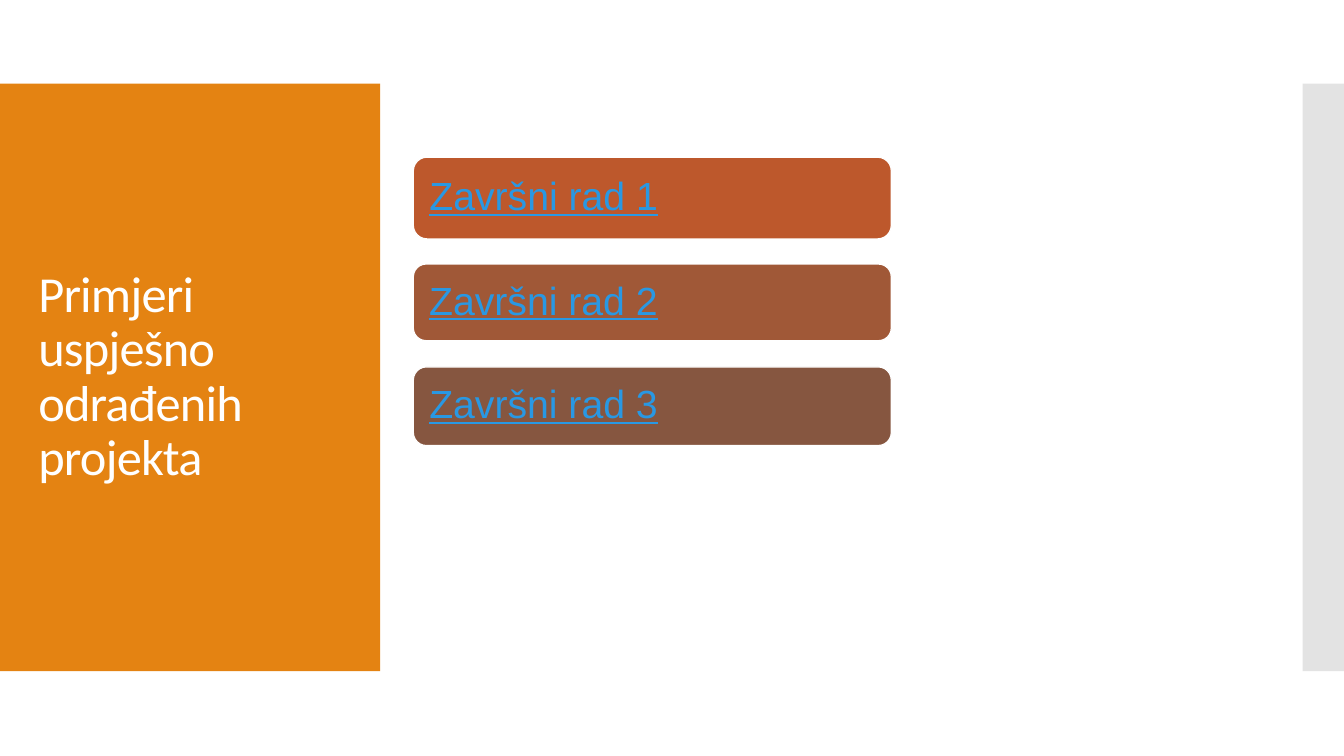
import dataclasses

import pptx
import pptx.dml.color
import pptx.enum.shapes
import pptx.enum.text
import pptx.oxml.ns
import pptx.shapes.autoshape
import pptx.slide
import pptx.text.text
import pptx.util
from lxml import etree

Inches = pptx.util.Inches
Shapes = pptx.enum.shapes.MSO_SHAPE

COLORS = {
    "white": "FFFFFF",
    "orange": "E48312",
    "grey": "C8C8C8",
    "rust": "BD582C",
    "sienna": "A05837",
    "brown": "865640",
    "link": "2998E3",
}


@dataclasses.dataclass(frozen=True)
class Panel:
    left: float
    width: float
    color: str
    opacity: int = 100


@dataclasses.dataclass(frozen=True)
class Project:
    label: str
    top: float
    height: float
    color: str


PANELS = [
    Panel(0, 3.77, "orange"),
    Panel(12.92, 0.42, "grey", opacity=50),
]
PROJECTS = [
    Project("Završni rad 1", 1.56, 0.81, "rust"),
    Project("Završni rad 2", 2.62, 0.76, "sienna"),
    Project("Završni rad 3", 3.64, 0.78, "brown"),
]


def rgb(name: str) -> pptx.dml.color.RGBColor:
    return pptx.dml.color.RGBColor.from_string(COLORS[name])


def write_text(frame: pptx.text.text.TextFrame, text: str, *, size: float, font: str,
               color: str, underline: bool = False, inset: tuple[float, float] = (0.1, 0.05),
               tracking: float = 0) -> None:
    """Write one left-aligned, vertically centred paragraph."""
    frame.word_wrap = True
    frame.auto_size = pptx.enum.text.MSO_AUTO_SIZE.NONE
    frame.vertical_anchor = pptx.enum.text.MSO_ANCHOR.MIDDLE
    frame.margin_left = frame.margin_right = Inches(inset[0])
    frame.margin_top = frame.margin_bottom = Inches(inset[1])
    para = frame.paragraphs[0]
    para.alignment = pptx.enum.text.PP_ALIGN.LEFT
    para.line_spacing = 0.9
    para.space_before = pptx.util.Pt(0)
    span = para.add_run()
    span.text = text
    span.font.size = pptx.util.Pt(size)
    span.font.name = font
    span.font.underline = underline
    span.font.color.rgb = rgb(color)
    if tracking:
        span.font._element.set("spc", str(round(tracking * 100)))


def add_box(page: pptx.slide.Slide, kind: Shapes, left: float, top: float, width: float,
            height: float, color: str) -> pptx.shapes.autoshape.Shape:
    box = page.shapes.add_shape(kind, Inches(left), Inches(top), Inches(width), Inches(height))
    box.shadow.inherit = False
    box.fill.solid()
    box.fill.fore_color.rgb = rgb(color)
    box.line.fill.background()
    return box


def add_panel(page: pptx.slide.Slide, panel: Panel) -> None:
    box = add_box(page, Shapes.RECTANGLE, panel.left, 0.83, panel.width, 5.83, panel.color)
    if panel.opacity < 100:
        fill_color = box.element.spPr.find(".//" + pptx.oxml.ns.qn("a:srgbClr"))
        alpha = etree.SubElement(fill_color, pptx.oxml.ns.qn("a:alpha"))
        alpha.set("val", str(panel.opacity * 1000))


def add_project(page: pptx.slide.Slide, project: Project) -> None:
    box = add_box(page, Shapes.ROUNDED_RECTANGLE, 4.1, project.top, 4.74, project.height,
                  project.color)
    box.line.color.rgb = rgb("white")
    box.line.width = pptx.util.Pt(0.85)
    write_text(box.text_frame, project.label, size=28, font="Arial", color="link",
               underline=True, inset=(0.12, 0.12))


def add_title(page: pptx.slide.Slide, text: str) -> None:
    title = page.shapes.title
    title.left, title.top = Inches(0.28), Inches(1.23)
    title.width, title.height = Inches(3.22), Inches(5.03)
    write_text(title.text_frame, text, size=36, font="Calibri", color="white", tracking=-0.6)
    # Bring the title in front of the panels
    title.element.getparent().append(title.element)


def main() -> None:
    deck = pptx.Presentation()
    deck.slide_width, deck.slide_height = Inches(13.33), Inches(7.5)
    page = deck.slides.add_slide(deck.slide_layouts.get_by_name("Title Only"))
    page.background.fill.solid()
    page.background.fill.fore_color.rgb = rgb("white")

    # Side panels
    for panel in PANELS:
        add_panel(page, panel)

    # Title on the orange panel
    add_title(page, "Primjeri uspješno odrađenih projekta")

    # List of projects
    for project in PROJECTS:
        add_project(page, project)

    deck.save("out.pptx")


if __name__ == "__main__":
    main()
